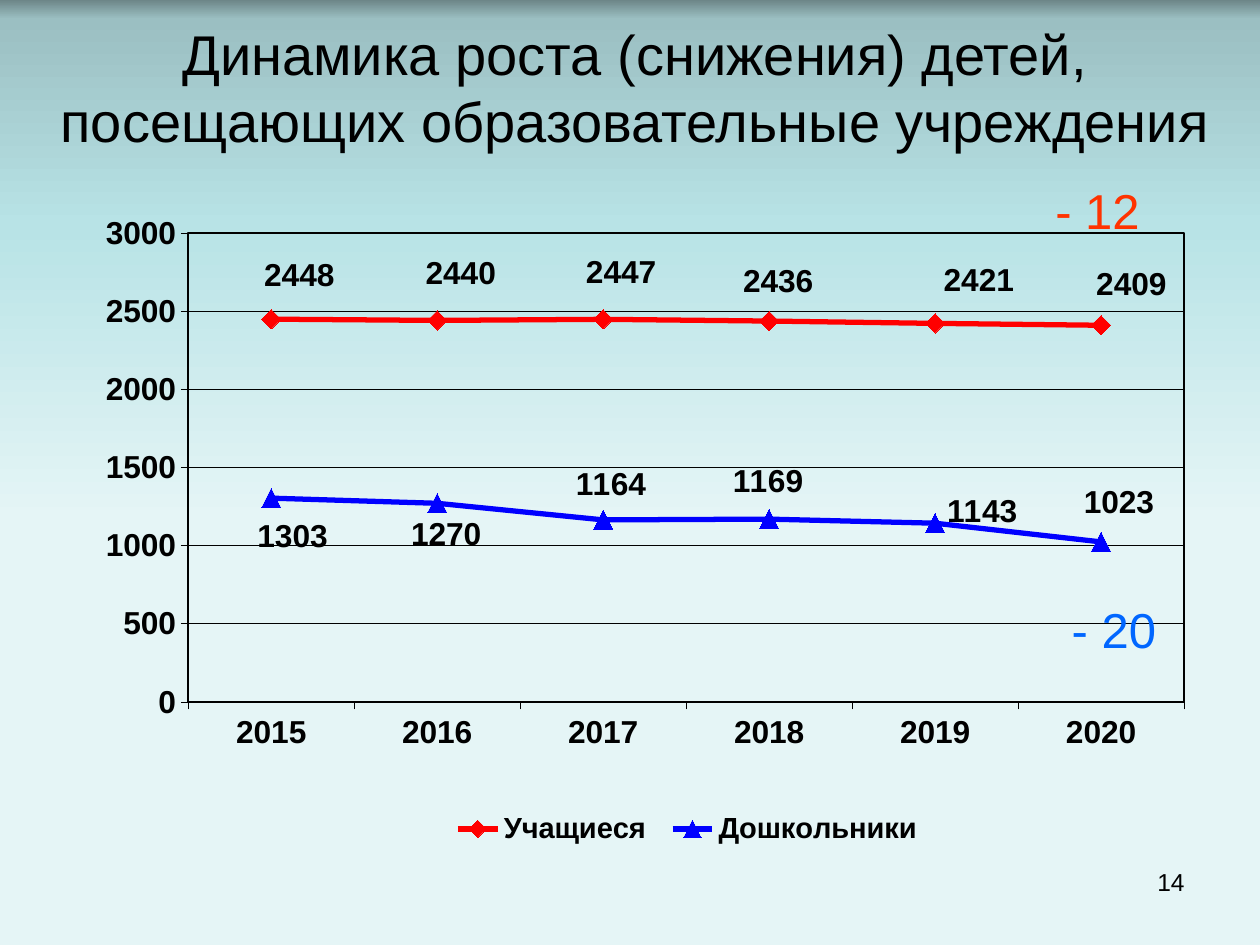
from copy import deepcopy

from lxml import etree
from pptx import Presentation
from pptx.chart.data import CategoryChartData
from pptx.dml.color import RGBColor
from pptx.enum.chart import (XL_CHART_TYPE, XL_LABEL_POSITION, XL_LEGEND_POSITION,
                             XL_MARKER_STYLE, XL_TICK_MARK)
from pptx.enum.text import MSO_ANCHOR, PP_ALIGN
from pptx.oxml import parse_xml
from pptx.oxml.ns import nsdecls, qn
from pptx.util import Inches, Pt

CENTER, RIGHT = PP_ALIGN.CENTER, PP_ALIGN.RIGHT
MIDDLE, TOP = MSO_ANCHOR.MIDDLE, MSO_ANCHOR.TOP
LINE_MARKERS = XL_CHART_TYPE.LINE_MARKERS
DIAMOND, TRIANGLE = XL_MARKER_STYLE.DIAMOND, XL_MARKER_STYLE.TRIANGLE
ABOVE = XL_LABEL_POSITION.ABOVE
BOTTOM = XL_LEGEND_POSITION.BOTTOM
OUTSIDE = XL_TICK_MARK.OUTSIDE

BLACK = RGBColor(0x00, 0x00, 0x00)
RED = RGBColor(0xFF, 0x00, 0x00)
BLUE = RGBColor(0x00, 0x00, 0xFF)
ORANGE = RGBColor(0xFF, 0x33, 0x00)
SKY = RGBColor(0x00, 0x66, 0xFF)
BACKGROUND_STOPS = [
    (0, RGBColor(0x6D, 0x86, 0x88)),
    (0.02, RGBColor(0x9B, 0xBF, 0xC2)),
    (0.24, RGBColor(0xB8, 0xE3, 0xE6)),
    (0.55, RGBColor(0xE5, 0xF5, 0xF6)),
]

YEARS = ["2015", "2016", "2017", "2018", "2019", "2020"]
# Label shifts are in percent of the chart's width and height
SERIES = [
    ("Учащиеся", [2448, 2440, 2447, 2436, 2421, 2409], RED, DIAMOND,
     [(2.5, -1.7), (2.1, -2.2), (1.6, -2.2), (0.8, -1.1), (3.9, -1.6), (2.7, -1.4)]),
    ("Дошкольники", [1303, 1270, 1164, 1169, 1143, 1023], BLUE, TRIANGLE,
     [(1.9, 10.9), (0.8, 9.8), (0.7, -0.5), (-0.1, -0.8), (4.2, 3.2), (1.6, -1.2)]),
]


def manual_layout(**values):
    """Return a c:layout element with the given settings in order."""
    layout = parse_xml(f"<c:layout {nsdecls('c')}><c:manualLayout/></c:layout>")
    for name, value in values.items():
        etree.SubElement(layout[0], qn(f"c:{name}")).set("val", str(value))
    return layout


def set_layout(element, index, **values):
    """Put a manual layout at the index, in place of any earlier layout."""
    for layout in element.findall(qn("c:layout")):
        element.remove(layout)
    element.insert(index, manual_layout(**values))


class SlideBuilder:
    font_name = "Arial"

    def __init__(self, slide):
        self.slide = slide

    def background(self, stops):
        fill = self.slide.background.fill
        fill.gradient()
        fill.gradient_angle = 270
        stop_list = self.slide.background._cSld.xpath(".//a:gsLst")[0]
        while len(stop_list) < len(stops):
            stop_list.append(deepcopy(stop_list[0]))
        for stop, (position, color) in zip(fill.gradient_stops, stops):
            stop.position = position
            stop.color.rgb = color

    def style_font(self, font, size, color=BLACK, bold=False):
        font.name, font.size, font.bold = self.font_name, Pt(size), bold
        font.color.rgb = color

    def text(self, text, left, top, width, height, size, color=BLACK,
             align=CENTER, anchor=MIDDLE, wrap=True):
        box = self.slide.shapes.add_textbox(
            Inches(left), Inches(top), Inches(width), Inches(height))
        frame = box.text_frame
        frame.word_wrap, frame.vertical_anchor = wrap, anchor
        paragraph = frame.paragraphs[0]
        paragraph.text, paragraph.alignment = text, align
        self.style_font(paragraph.font, size, color)

    def line_chart(self, left, top, width, height):
        data = CategoryChartData()
        data.categories = YEARS
        for name, values, *_ in SERIES:
            data.add_series(name, values)
        chart = self.slide.shapes.add_chart(
            LINE_MARKERS, Inches(left), Inches(top), Inches(width),
            Inches(height), data).chart
        chart.has_title = False
        self.style_font(chart.font, 18.1, bold=True)

        # Axes and grid
        value_axis = chart.value_axis
        value_axis.minimum_scale, value_axis.maximum_scale = 0, 3000
        value_axis.major_unit = 500
        value_axis.has_major_gridlines = True
        for axis in (chart.category_axis, value_axis):
            axis.major_tick_mark = OUTSIDE
            self.style_font(axis.tick_labels.font, 18.1, bold=True)
            self.style_line(axis.format.line, BLACK, 0.25)
        self.style_line(value_axis.major_gridlines.format.line, BLACK, 0.25)

        # Plot area with its frame
        plot_area = chart._chartSpace.xpath(".//c:plotArea")[0]
        set_layout(plot_area, 0, layoutTarget="inner", xMode="edge", yMode="edge",
                   x=0.105, y=0.05, w=0.888, h=0.72)
        plot_area.append(parse_xml(
            f"<c:spPr {nsdecls('c', 'a')}><a:noFill/><a:ln w='12700'><a:solidFill>"
            f"<a:srgbClr val='{BLACK}'/></a:solidFill></a:ln></c:spPr>"))

        # Legend
        chart.has_legend = True
        legend = chart.legend
        legend.position, legend.include_in_layout = BOTTOM, False
        self.style_font(legend.font, 16.6, bold=True)
        set_layout(legend._element, 1, xMode="edge", yMode="edge",
                   x=0.33, y=0.93, w=0.44, h=0.07)

        for series, (_, _, color, marker, shifts) in zip(chart.plots[0].series, SERIES):
            self.style_series(series, color, marker, shifts)

    def style_line(self, line, color, width):
        line.color.rgb, line.width = color, Pt(width)

    def style_series(self, series, color, marker, shifts):
        series.smooth = False
        self.style_line(series.format.line, color, 3)
        series.marker.style, series.marker.size = marker, 11
        series.marker.format.fill.solid()
        series.marker.format.fill.fore_color.rgb = color
        self.style_line(series.marker.format.line, color, 0.75)

        labels = series.data_labels
        labels.show_value, labels.position = True, ABOVE
        self.style_font(labels.font, 18.1, bold=True)
        for index in range(len(shifts)):
            label = series.points[index].data_label
            self.style_font(label.font, 18.1, bold=True)
            label.position = ABOVE
        for element, (x, y) in zip(series._element.xpath("c:dLbls/c:dLbl"), shifts):
            set_layout(element, 1, x=x / 100, y=y / 100)
        for leader in series._element.xpath("c:dLbls/c:showLeaderLines"):
            leader.set("val", "0")


def main():
    presentation = Presentation()
    presentation.slide_width, presentation.slide_height = Inches(10), Inches(7.5)
    builder = SlideBuilder(presentation.slides.add_slide(presentation.slide_layouts[6]))

    builder.background(BACKGROUND_STOPS)
    # Slide number and title
    builder.text("14", 7.17, 6.83, 2.33, 0.52, 14, align=RIGHT, anchor=TOP)
    builder.text("Динамика роста (снижения) детей, посещающих образовательные учреждения",
                 0.33, 0.3, 9.42, 0.78, 32)
    # Chart and the changes in the last year
    builder.line_chart(0.56, 1.59, 8.9, 5.17)
    builder.text("- 20", 8.38, 4.58, 0.92, 0.83, 28, SKY, wrap=False)
    builder.text("- 12", 8.25, 1.33, 0.92, 0.67, 28, ORANGE, wrap=False)

    presentation.save("out.pptx")


if __name__ == "__main__":
    main()
